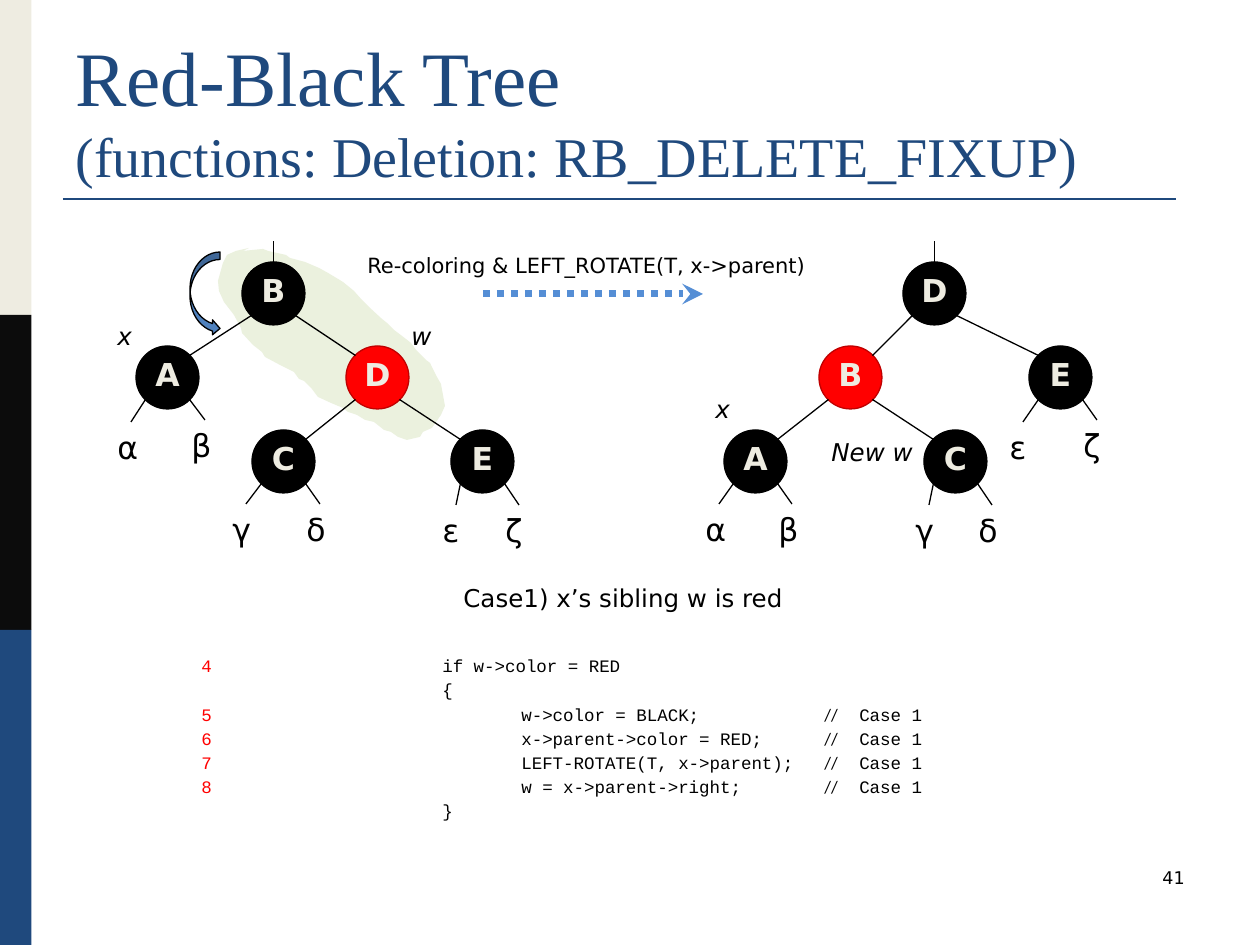
from lxml import etree
from pptx import Presentation, util as u
from pptx.dml.color import RGBColor
from pptx.enum import dml, shapes, text
from pptx.oxml.ns import qn

PX = 914400 // 126
SIZE = 63      # node diameter
SKEW = 22      # from a node's centre to its diagonal points
SANS, SERIF, MONO = "DejaVu Sans", "Times New Roman", "Courier New"
NAVY, BLACK, RED, CREAM = "1F497D", "000000", "FF0000", "EEECE1"

TITLE = [("Red-Black Tree", 44), ("(functions: Deletion: RB_DELETE_FIXUP)", 32)]
BARS = [CREAM, "0C0C0C", NAVY]

# nodes: left, top, red?; edges: parent, child, side; leaves: node, side, text, left, top
LEFT, RIGHT = -1, 1
TREES = [
    dict(root="B",
         nodes={"B": (242, 262, False), "A": (136, 346, False), "D": (346, 346, True),
                "C": (252, 430, False), "E": (451, 430, False)},
         edges=[("B", "A", LEFT), ("B", "D", RIGHT), ("D", "C", LEFT), ("D", "E", RIGHT)],
         leaves=[("A", LEFT, "α", 105, 422), ("A", RIGHT, "β", 179, 420),
                 ("C", LEFT, "γ", 220, 504), ("C", RIGHT, "δ", 294, 504),
                 ("E", LEFT, "ε", 430, 505), ("E", RIGHT, "ζ", 493, 505)]),
    dict(root="D",
         nodes={"D": (903, 262, False), "E": (1029, 346, False), "B": (819, 346, True),
                "A": (724, 430, False), "C": (924, 430, False)},
         edges=[("D", "B", LEFT), ("D", "E", RIGHT), ("B", "A", LEFT), ("B", "C", RIGHT)],
         leaves=[("E", LEFT, "ε", 997, 422), ("E", RIGHT, "ζ", 1071, 420),
                 ("A", LEFT, "α", 693, 504), ("A", RIGHT, "β", 766, 504),
                 ("C", LEFT, "γ", 903, 505), ("C", RIGHT, "δ", 966, 505)]),
]

# text, box, size, italic
LABELS = [
    ("x", (105, 315, 53, 43), 14, True),
    ("w", (399, 315, 53, 43), 14, True),
    ("x", (703, 388, 53, 43), 14, True),
    ("New w", (819, 431, 116, 43), 14, True),
    ("Re-coloring & LEFT_ROTATE(T, x->parent)", (355, 246, 505, 38), 12, False),
    ("Case1) x’s sibling w is red", (451, 577, 462, 43), 14, False),
]

# line number, indent, statement, has a comment
CODE = [
    ("4", 1, "if w->color = RED", False),
    ("", 1, "{", False),
    ("5", 2, "w->color = BLACK;", True),
    ("6", 2, "x->parent->color = RED;", True),
    ("7", 2, "LEFT-ROTATE(T, x->parent);", True),
    ("8", 2, "w = x->parent->right;", True),
    ("", 1, "}", False),
]
TABS = [241, 320, 623, 658]

BLOB = [
    (249, 248), (236, 251), (227, 255), (223, 263), (218, 281), (219, 291), (224, 302),
    (234, 315), (241, 328), (242, 333), (253, 345), (262, 352), (265, 357), (280, 365),
    (294, 372), (299, 379), (304, 381), (312, 389), (318, 397), (331, 403), (343, 408),
    (348, 412), (357, 415), (365, 420), (374, 422), (384, 430), (391, 432), (398, 437),
    (407, 440), (420, 437), (423, 432), (432, 428), (441, 415), (445, 406), (441, 384),
    (437, 377), (430, 363), (426, 360), (416, 350), (411, 343), (402, 336), (394, 330),
    (387, 323), (382, 319), (369, 307), (362, 300), (354, 291), (343, 282), (328, 273),
    (319, 268), (305, 262), (290, 258), (286, 255), (268, 251), (263, 249), (243, 251),
]


def px(*vals):
    return [round(v * PX) for v in vals]


def tint(color, value):
    color.rgb = RGBColor.from_string(value)


def paint(shape, fill, line=None):
    shape.shadow.inherit = False
    shape.fill.solid()
    tint(shape.fill.fore_color, fill)
    if line:
        tint(shape.line.color, line)
        shape.line.width = u.Pt(0.75)
    else:
        shape.line.fill.background()


def write(para, words, color=BLACK, size=10, name=SANS, **style):
    run = para.add_run()
    run.text = words
    for key, val in dict(size=u.Pt(size), name=name, **style).items():
        setattr(run.font, key, val)
    tint(run.font.color, color)


def box(slide, place):
    frame = slide.shapes.add_textbox(*px(*place)).text_frame
    frame.word_wrap = True
    return frame


def join(slide, start, end, color=BLACK, width=0.75):
    line = slide.shapes.add_connector(shapes.MSO_CONNECTOR.STRAIGHT, *px(*start, *end))
    tint(line.line.color, color)
    line.line.width = u.Pt(width)
    etree.SubElement(line._element.spPr, qn("a:effectLst"))
    return line


def draw_node(slide, name, left, top, red):
    node = slide.shapes.add_shape(shapes.MSO_SHAPE.OVAL, *px(left, top, SIZE, SIZE))
    paint(node, RED if red else BLACK, "C00000" if red else BLACK)
    frame = node.text_frame
    form = dict(margin_left=0, margin_right=0, margin_top=0, margin_bottom=u.Inches(0.05),
                vertical_anchor=text.MSO_ANCHOR.MIDDLE)
    for key, val in form.items():
        setattr(frame, key, val)
    para = frame.paragraphs[0]
    para.alignment = text.PP_ALIGN.CENTER
    write(para, name, CREAM, 18, bold=True)
    return node


def draw_tree(slide, root, nodes, edges, leaves):
    def corner(name, side, end):
        left, top, _ = nodes[name]
        return left + SIZE / 2 + side * SKEW, top + SIZE / 2 + end * SKEW

    ovals = {name: draw_node(slide, name, *spot) for name, spot in nodes.items()}
    for parent, child, side in edges:
        join(slide, corner(parent, side, 1), corner(child, -side, -1))
    for name, side, words, left, top in leaves:
        join(slide, corner(name, side, 1), (left + 26, top))
        write(box(slide, (left, top, 53, 50)).paragraphs[0], words, size=18)
    left, top, _ = nodes[root]
    mid = left + SIZE / 2
    join(slide, (mid, top), (mid, top - 21)).begin_connect(ovals[root], 0)


def draw_code(slide):
    frame = box(slide, (189, 646, 882, 184))
    for i, (num, depth, words, note) in enumerate(CODE):
        para = frame.add_paragraph() if i else frame.paragraphs[0]
        para.line_spacing = 1.15
        stops = etree.SubElement(para._p.get_or_add_pPr(), qn("a:tabLst"))
        for pos in px(*TABS):
            etree.SubElement(stops, qn("a:tab"), pos=str(pos), algn="l")
        if num:
            write(para, num, RED, name=MONO)
        write(para, "\t" * depth + words, name=MONO)
        if note:
            write(para, "\t//", name="Calibri")
            write(para, "\tCase 1", name=MONO)


def main():
    deck = Presentation()
    deck.slide_width, deck.slide_height = px(1260, 945)
    slide = deck.slides.add_slide(deck.slide_layouts[5])

    for i, color in enumerate(BARS):
        bar = slide.shapes.add_shape(shapes.MSO_SHAPE.RECTANGLE, *px(0, i * 315, 31.5, 315))
        paint(bar, color)
    join(slide, (63, 199), (1176, 199), NAVY, 1.5)

    head = slide.shapes.title
    head.left, head.top, head.width, head.height = px(63, 38, 1134, 157)
    head.text_frame.auto_size = text.MSO_AUTO_SIZE.NONE
    head.text_frame.vertical_anchor = text.MSO_ANCHOR.BOTTOM
    para = head.text_frame.paragraphs[0]
    para.alignment = text.PP_ALIGN.LEFT
    for i, (words, size) in enumerate(TITLE):
        if i:
            para.add_line_break()
        write(para, words, NAVY, size, SERIF)

    pen = slide.shapes.build_freeform(*BLOB[0], scale=PX)
    pen.add_line_segments(BLOB[1:], close=True)
    paint(pen.convert_to_shape(), "EBF1DE")

    for tree in TREES:
        draw_tree(slide, **tree)
    for words, place, size, slant in LABELS:
        write(box(slide, place).paragraphs[0], words, size=size, italic=slant)

    arrow = join(slide, (483, 294), (703, 294), "558ED5", 4)
    arrow.line.dash_style = dml.MSO_LINE.ROUND_DOT
    etree.SubElement(arrow.line._get_or_add_ln(), qn("a:tailEnd"), type="stealth")
    turn = slide.shapes.add_shape(shapes.MSO_SHAPE.CURVED_RIGHT_ARROW, *px(190, 252, 30, 84))
    paint(turn, "4F81BD", BLACK)

    draw_code(slide)
    page = box(slide, (903, 861, 294, 63)).paragraphs[0]
    page.alignment = text.PP_ALIGN.RIGHT
    write(page, "41")
    deck.save("out.pptx")


if __name__ == "__main__":
    main()
